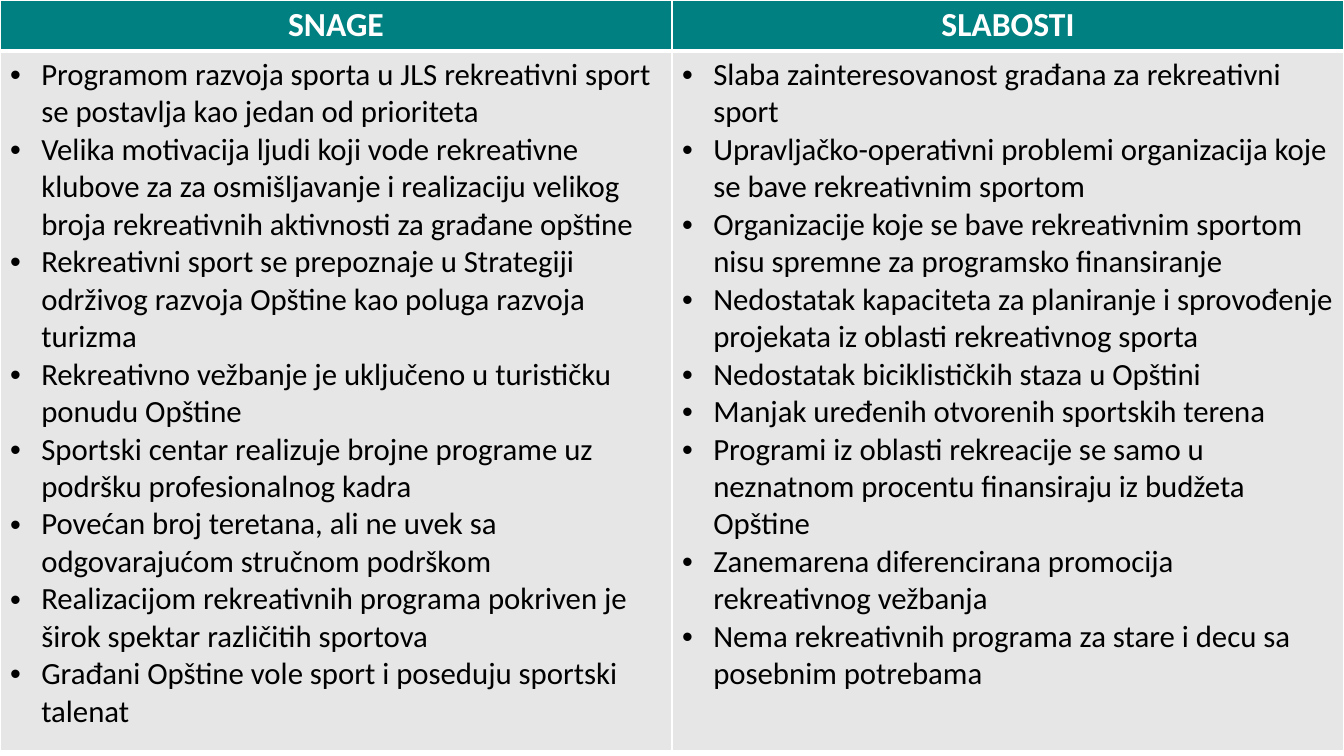
from lxml.etree import SubElement
from pptx import Presentation
from pptx.dml.color import RGBColor
from pptx.enum.text import PP_ALIGN
from pptx.oxml.ns import qn
from pptx.util import Inches, Pt

TEAL = RGBColor(0x00, 0x80, 0x80)
GRAY = RGBColor(0xE7, 0xE6, 0xE6)
WHITE = RGBColor(0xFF, 0xFF, 0xFF)
BLACK = RGBColor(0x00, 0x00, 0x00)

HEADER_FONT = {"name": "Calibri", "size": Pt(24), "bold": True}
BODY_FONT = {"name": "Calibri", "size": Pt(22), "bold": False}
THIN, THICK = Pt(1), Pt(3)
BULLET_INDENT = Inches(0.31)
SLIDE_WIDTH, SLIDE_HEIGHT = Inches(13.33), Inches(7.5)
ROW_HEIGHTS = [Inches(0.5), Inches(6.94)]

SWOT_COLUMNS = {
    "SNAGE": [
        "Programom razvoja sporta u JLS rekreativni sport se postavlja kao jedan od prioriteta",
        "Velika motivacija ljudi koji vode rekreativne klubove za za osmišljavanje i realizaciju "
        "velikog broja rekreativnih aktivnosti za građane opštine",
        "Rekreativni sport se prepoznaje u Strategiji održivog razvoja Opštine kao poluga razvoja turizma",
        "Rekreativno vežbanje je uključeno u turističku ponudu Opštine",
        "Sportski centar realizuje brojne programe uz podršku profesionalnog kadra",
        "Povećan broj teretana, ali ne uvek sa odgovarajućom stručnom podrškom",
        "Realizacijom rekreativnih programa pokriven je širok spektar različitih sportova",
        "Građani Opštine vole sport i poseduju sportski talenat",
    ],
    "SLABOSTI": [
        "Slaba zainteresovanost građana za rekreativni sport",
        "Upravljačko-operativni problemi organizacija koje se bave rekreativnim sportom",
        "Organizacije koje se bave rekreativnim sportom nisu spremne za programsko finansiranje",
        "Nedostatak kapaciteta za planiranje i sprovođenje projekata iz oblasti rekreativnog sporta",
        "Nedostatak biciklističkih staza u Opštini",
        "Manjak uređenih otvorenih sportskih terena",
        "Programi iz oblasti rekreacije se samo u neznatnom procentu finansiraju iz budžeta Opštine",
        "Zanemarena diferencirana promocija rekreativnog vežbanja",
        "Nema rekreativnih programa za stare i decu sa posebnim potrebama",
    ],
}


def format_font(font, values, color):
    for name, value in values.items():
        setattr(font, name, value)
    font.color.rgb = color


def add_bullet(paragraph):
    properties = paragraph._p.get_or_add_pPr()
    properties.set("marL", str(BULLET_INDENT))
    properties.set("indent", str(-BULLET_INDENT))
    SubElement(properties, qn("a:buFont"), typeface="Arial")
    SubElement(properties, qn("a:buChar"), char="•")


def style_cell(cell, fill_color, top, bottom):
    """Give the cell white borders and a solid fill; top and bottom are line widths."""
    properties = cell._tc.get_or_add_tcPr()
    widths = {"a:lnL": THIN, "a:lnR": THIN, "a:lnT": top, "a:lnB": bottom}
    for tag, width in widths.items():
        line = SubElement(properties, qn(tag), w=str(width))
        fill = SubElement(line, qn("a:solidFill"))
        SubElement(fill, qn("a:srgbClr"), val=str(WHITE))
    cell.fill.solid()
    cell.fill.fore_color.rgb = fill_color


def fill_header(cell, heading):
    style_cell(cell, TEAL, THIN, THICK)
    paragraph = cell.text_frame.paragraphs[0]
    paragraph.text = heading
    paragraph.alignment = PP_ALIGN.CENTER
    format_font(paragraph.runs[0].font, HEADER_FONT, WHITE)


def fill_body(cell, points):
    style_cell(cell, GRAY, THICK, THIN)
    cell.text_frame.text = "\n".join(points)
    for paragraph in cell.text_frame.paragraphs:
        add_bullet(paragraph)
        format_font(paragraph.runs[0].font, BODY_FONT, BLACK)


def add_swot_table(slide):
    frame = slide.shapes.add_table(
        len(ROW_HEIGHTS), len(SWOT_COLUMNS), 0, 0, SLIDE_WIDTH, sum(ROW_HEIGHTS)
    )
    table = frame.table
    for row, height in zip(table.rows, ROW_HEIGHTS):
        row.height = height
    for column, (heading, points) in enumerate(SWOT_COLUMNS.items()):
        fill_header(table.cell(0, column), heading)
        fill_body(table.cell(1, column), points)


def main():
    presentation = Presentation()
    presentation.slide_width = SLIDE_WIDTH
    presentation.slide_height = SLIDE_HEIGHT
    blank_layout = presentation.slide_layouts[6]
    add_swot_table(presentation.slides.add_slide(blank_layout))
    presentation.save("out.pptx")


if __name__ == "__main__":
    main()
